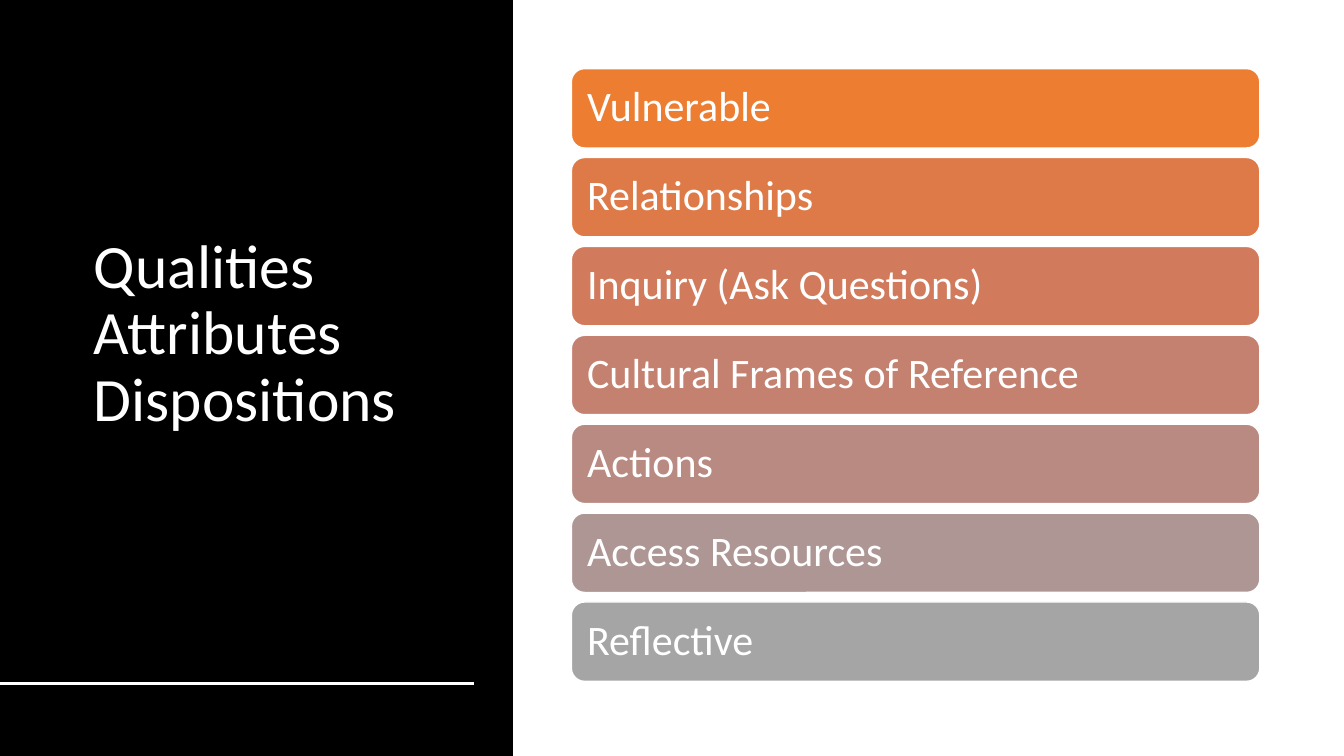
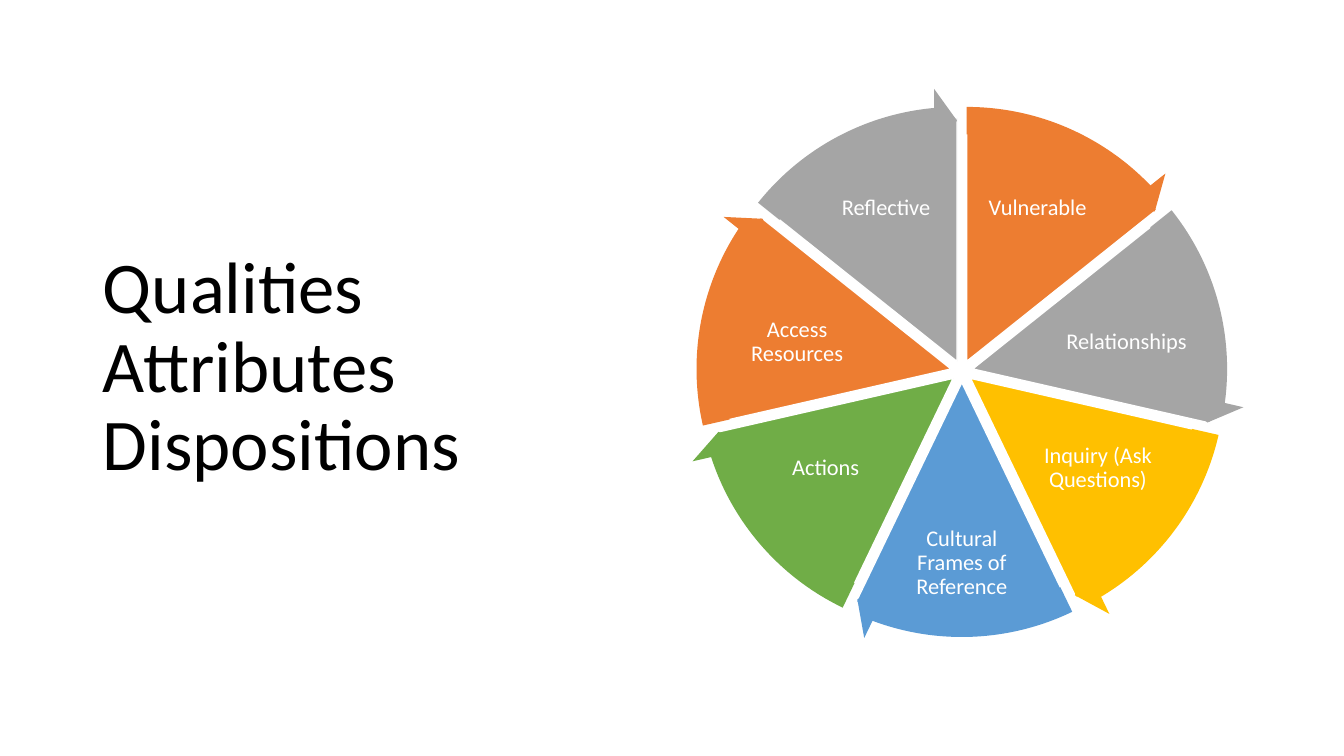
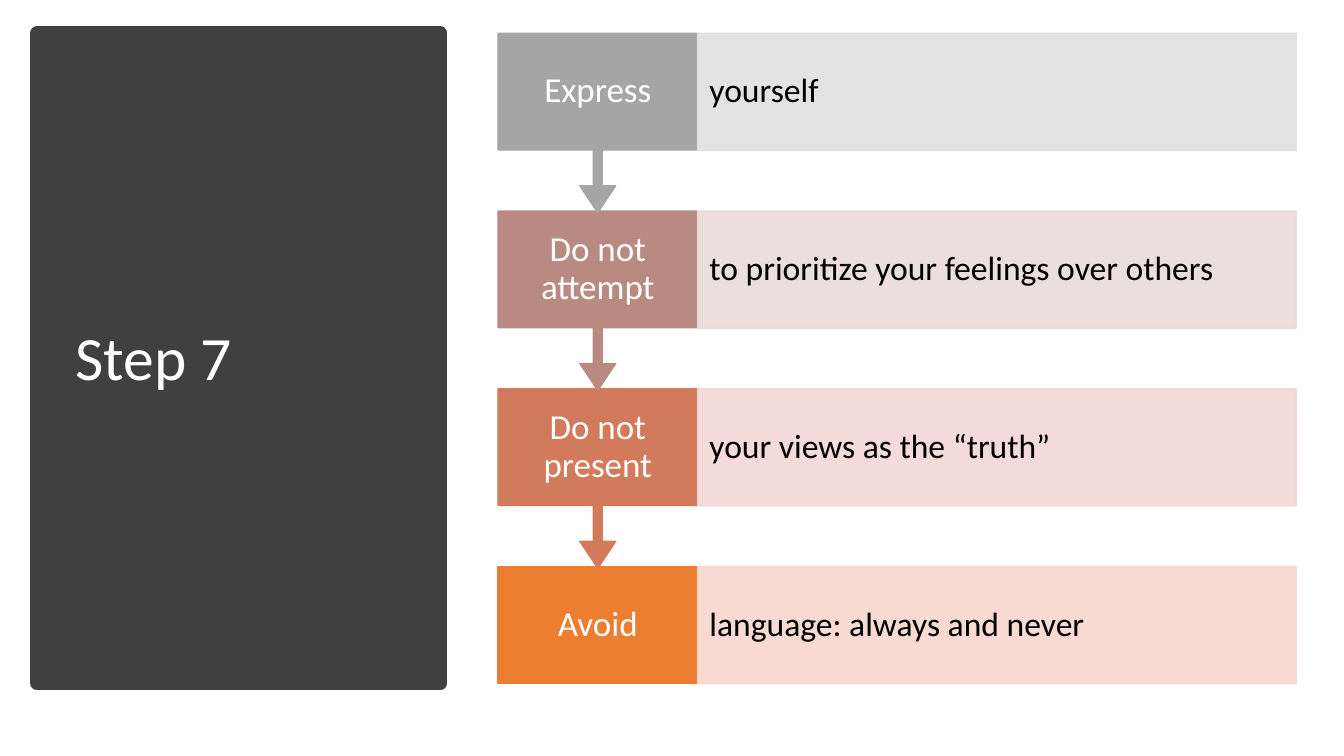
"""Build three slides on qualities, attributes and dispositions."""
from dataclasses import dataclass
from math import cos, radians, sin

from lxml.etree import SubElement
from pptx import Presentation
from pptx.dml.color import RGBColor
from pptx.enum.shapes import MSO_CONNECTOR, MSO_SHAPE as Preset
from pptx.enum.text import MSO_ANCHOR as Anchor, MSO_AUTO_SIZE as AutoSize, PP_ALIGN as Align
from pptx.oxml.ns import qn
from pptx.util import Cm, Pt


@dataclass(frozen=True)
class Theme:
    font: str = "Calibri"
    white: str = "FFFFFF"
    black: str = "000000"
    charcoal: str = "404040"
    ramp: tuple = ("ED7D31", "DE7A47", "D17B5C", "C48170", "B98A82", "AE9694", "A5A5A5")
    accents: tuple = ("ED7D31", "A5A5A5", "FFC000", "5B9BD5", "70AD47")
    title: int = 44
    large_title: int = 52
    bar: int = 30
    wedge: int = 16
    step: int = 25
    detail: int = 24
    line_spacing: float = 0.9
    tint_alpha: int = 90000


THEME = Theme()
WIDTH, HEIGHT = 33.87, 19.05

HEADING = ["Qualities", "Attributes", "Dispositions"]
QUALITIES = [
    "Vulnerable",
    "Relationships",
    "Inquiry (Ask Questions)",
    "Cultural Frames of Reference",
    "Actions",
    "Access Resources",
    "Reflective",
]
STEPS = [
    ("Express", "yourself", THEME.ramp[6], "E1E1E1"),
    ("Do not attempt", "to prioritize your feelings over others", THEME.ramp[4], "E9DBDA"),
    ("Do not present", "your views as the “truth”", THEME.ramp[2], "F1D8D4"),
    ("Avoid", "language: always and never", THEME.ramp[0], "F8D7CE"),
]
HALF_LABELS = [
    (1.91, -4.1, 2.92, 2.34),
    (4.15, -0.74, 3.35, 2.06),
    (3.43, 2.44, 2.92, 2.26),
    (0, 4.83, 2.84, 2.06),
]
LABELS = HALF_LABELS + [(-x, y, w, h) for x, y, w, h in HALF_LABELS[2::-1]]


def rgb(color):
    return RGBColor.from_string(color)


def write(shape, lines, size, color, align=Align.LEFT, margins=None):
    frame = shape.text_frame
    frame.word_wrap = True
    frame.auto_size = AutoSize.NONE
    frame.vertical_anchor = Anchor.MIDDLE
    if margins:
        frame.margin_left = frame.margin_right = Cm(margins[0])
        frame.margin_top = frame.margin_bottom = Cm(margins[1])
    paragraph = frame.paragraphs[0]
    paragraph.alignment = align
    paragraph.line_spacing = THEME.line_spacing
    for index, line in enumerate(lines):
        if index:
            paragraph.add_line_break()
        run = paragraph.add_run()
        run.text = line
        run.font.name = THEME.font
        run.font.size = Pt(size)
        run.font.color.rgb = rgb(color)


def add_shape(slide, preset, box, fill, line=None, line_width=1, adjustments=()):
    shape = slide.shapes.add_shape(preset, *map(Cm, box))
    shape.shadow.inherit = False
    shape.fill.solid()
    shape.fill.fore_color.rgb = rgb(fill)
    if line:
        shape.line.color.rgb = rgb(line)
        shape.line.width = Pt(line_width)
    else:
        shape.line.fill.background()
    for index, value in enumerate(adjustments):
        shape.adjustments[index] = value
    return shape


def add_panel(slide, box, fill, line=None, line_width=1):
    panel = add_shape(slide, Preset.RECTANGLE, box, fill, line, line_width)
    slide.shapes._spTree.insert(2, panel._element)


def make_translucent(shape):
    for color in shape._element.spPr.iter(qn("a:srgbClr")):
        SubElement(color, qn("a:alpha"), val=str(THEME.tint_alpha))


def add_titled_slide(presentation, lines, box, size, color):
    slide = presentation.slides.add_slide(presentation.slide_layouts[5])
    title = slide.shapes.title
    title.left, title.top, title.width, title.height = map(Cm, box)
    write(title, lines, size, color)
    return slide


def add_bars_slide(presentation):
    slide = add_titled_slide(presentation, HEADING, (2.11, 1.55, 9.91, 13.77),
                             THEME.title, THEME.white)
    add_panel(slide, (0, 0, 12.93, HEIGHT), THEME.black)
    rule = slide.shapes.add_connector(MSO_CONNECTOR.STRAIGHT, *map(Cm, (0, 17.22, 11.94, 17.22)))
    rule.line.color.rgb = rgb(THEME.white)
    rule.line.width = Pt(2)
    SubElement(rule._element.spPr, qn("a:effectLst"))
    top, pitch = 1.73, 2.24
    for index, (quality, color) in enumerate(zip(QUALITIES, THEME.ramp)):
        bar = add_shape(slide, Preset.ROUNDED_RECTANGLE,
                        (14.4, top + index * pitch, 17.35, 2), color, THEME.white)
        write(bar, [quality], THEME.bar, THEME.white, margins=(0.3, 0.3))


def add_wheel_slide(presentation):
    slide = add_titled_slide(presentation, HEADING, (2.34, 1.55, 13.51, 15.47),
                             THEME.large_title, THEME.black)
    center_x, center_y, spread = 24.24, 9.36, 0.28
    pie_size, arrow_size = 12.27, 13.79
    full_turn, first_angle, head_angle = 216, 162, 3.275
    sweep = full_turn / len(QUALITIES)
    arrows = []
    for index, (quality, label) in enumerate(zip(QUALITIES, LABELS)):
        color = THEME.accents[index % len(THEME.accents)]
        start = (first_angle + index * sweep) % full_turn
        end = (start + sweep) % full_turn
        middle = radians((start + sweep / 2) * 360 / full_turn)
        x, y = center_x + spread * cos(middle), center_y + spread * sin(middle)
        add_shape(slide, Preset.PIE, (x - pie_size / 2, y - pie_size / 2, pie_size, pie_size),
                  color, THEME.white, adjustments=(start, end))
        dx, dy, width, height = label
        text_box = slide.shapes.add_textbox(
            Cm(center_x + dx - width / 2), Cm(center_y + dy - height / 2), Cm(width), Cm(height))
        write(text_box, [quality], THEME.wedge, THEME.white, Align.CENTER, (0.05, 0.05))
        arrow_box = (x - arrow_size / 2, y - arrow_size / 2, arrow_size, arrow_size)
        arrows.append((arrow_box, color, (0.05, head_angle, end - head_angle, start, 0.06)))
    for box, color, adjustments in arrows:
        add_shape(slide, Preset.CIRCULAR_ARROW, box, color, adjustments=adjustments)


def add_steps_slide(presentation):
    slide = add_titled_slide(presentation, ["Step 7"], (1.65, 1.78, 8.79, 14.6),
                             THEME.title, THEME.white)
    add_panel(slide, (0.94, 0.84, 10.16, 16.38), THEME.charcoal, THEME.charcoal, 10)
    left, top, pitch = 12.55, 0.84, 4.48
    step_width, detail_width, box_height, callout_height = 5.03, 15.09, 2.95, 4.52
    last = len(STEPS) - 1
    for index, (action, detail, color, tint) in reversed(list(enumerate(STEPS))):
        y = top + index * pitch
        if index == last:
            step = add_shape(slide, Preset.RECTANGLE, (left, y, step_width, box_height),
                             color, color)
        else:
            step = add_shape(slide, Preset.DOWN_ARROW_CALLOUT,
                             (left, y, step_width, callout_height), color, color,
                             adjustments=(0.05, 0.1, 0.15, 0.65))
        write(step, [action], THEME.step, THEME.white, Align.CENTER, (0.36, 0.48))
        detail_box = add_shape(slide, Preset.RECTANGLE,
                               (left + step_width, y, detail_width, box_height), tint, tint)
        make_translucent(detail_box)
        write(detail_box, [detail], THEME.detail, THEME.black, margins=(0.3, 0.84))


def main():
    presentation = Presentation()
    presentation.slide_width, presentation.slide_height = Cm(WIDTH), Cm(HEIGHT)
    add_bars_slide(presentation)
    add_wheel_slide(presentation)
    add_steps_slide(presentation)
    presentation.save("out.pptx")


if __name__ == "__main__":
    main()
